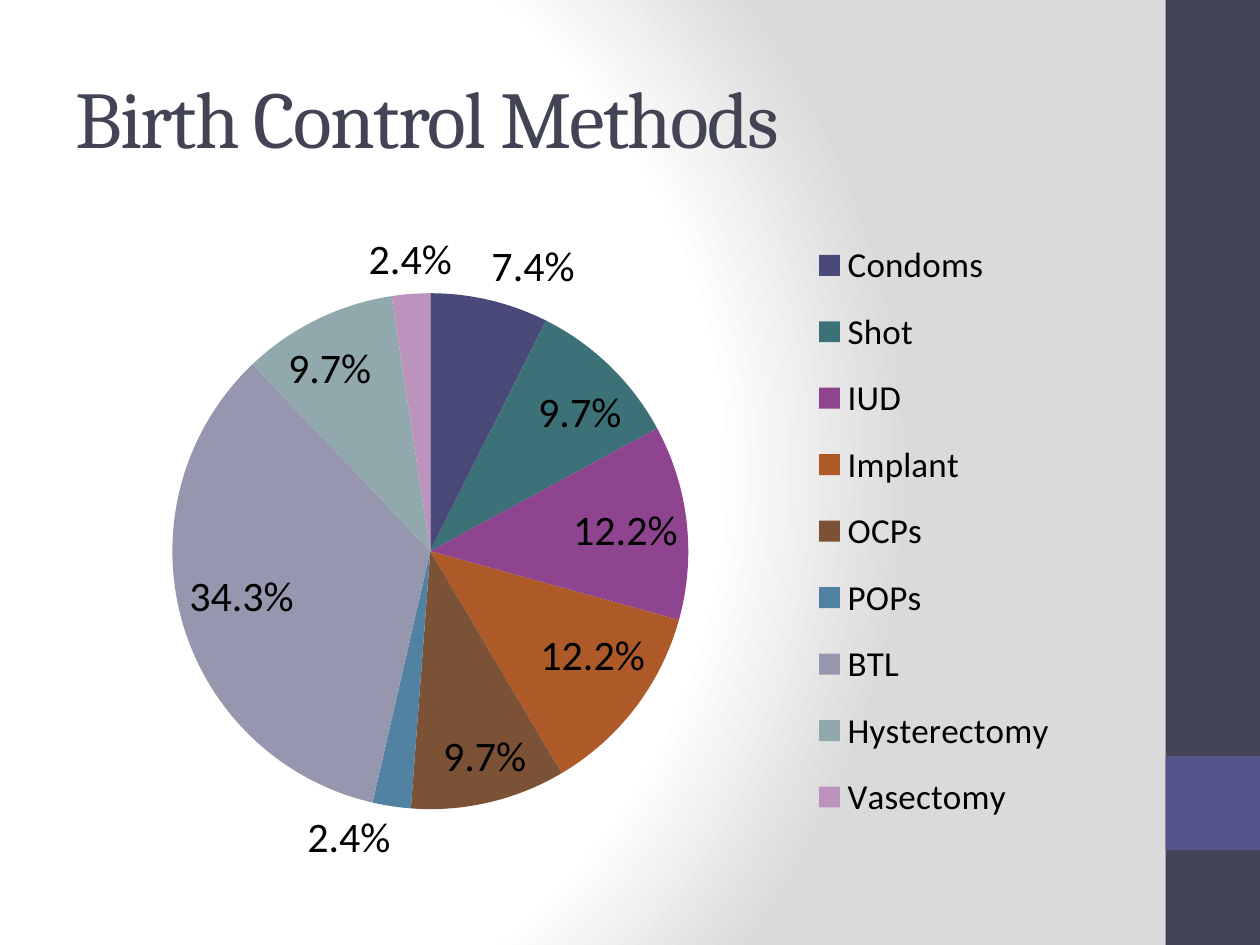
from dataclasses import dataclass

from lxml import etree
from pptx import Presentation
from pptx.chart.data import CategoryChartData
from pptx.dml.color import RGBColor
from pptx.enum.chart import XL_CHART_TYPE, XL_LABEL_POSITION, XL_LEGEND_POSITION
from pptx.enum.shapes import MSO_SHAPE
from pptx.enum.text import MSO_ANCHOR
from pptx.oxml import parse_xml
from pptx.oxml.ns import nsdecls, qn
from pptx.util import Inches, Pt

PIE = XL_CHART_TYPE.PIE
BEST_FIT = XL_LABEL_POSITION.BEST_FIT
LEGEND_RIGHT = XL_LEGEND_POSITION.RIGHT
RECTANGLE = MSO_SHAPE.RECTANGLE
MIDDLE = MSO_ANCHOR.MIDDLE


@dataclass(frozen=True)
class Theme:
    heading_font: str = "Cambria"
    body_font: str = "Calibri"
    title_size: int = 46
    label_size: int = 24
    legend_size: int = 20
    dark: str = "424456"
    accent: str = "53548A"
    text: str = "000000"
    background_stops: tuple = ((0, "FFFFFF"), (75, "FFFFFF"), (100, "DADADA"))


THEME = Theme()
WIDTH, HEIGHT = 10, 7.5
BAND_WIDTH = 0.75
CONTENT_LEFT, CONTENT_WIDTH = 0.5, 8.33

# Method, share in percent, slice colour
METHODS = (
    ("Condoms", 7.4, "4A4A7A"),
    ("Shot", 9.7, "3C7277"),
    ("IUD", 12.2, "8F4490"),
    ("Implant", 12.2, "AE5A28"),
    ("OCPs", 9.7, "7B5236"),
    ("POPs", 2.4, "5182A1"),
    ("BTL", 34.3, "9796AF"),
    ("Hysterectomy", 9.7, "91A9AC"),
    ("Vasectomy", 2.4, "BB93BC"),
)


def set_font(font, name, size, color):
    font.name = name
    font.size = Pt(size)
    font.color.rgb = RGBColor.from_string(color)


def paint_background(slide):
    """Fill the slide with a circular gradient centred left of the middle."""
    fill = slide.background.fill
    fill.solid()
    solid = slide.element.cSld.find(".//" + qn("a:solidFill"))
    stops = "".join(
        f'<a:gs pos="{position * 1000}"><a:srgbClr val="{color}"/></a:gs>'
        for position, color in THEME.background_stops
    )
    gradient = parse_xml(
        f'<a:gradFill {nsdecls("a")} rotWithShape="1"><a:gsLst>{stops}</a:gsLst>'
        '<a:path path="circle">'
        '<a:fillToRect l="20000" t="50000" r="100000" b="50000"/>'
        "</a:path></a:gradFill>"
    )
    solid.getparent().replace(solid, gradient)


def add_block(slide, box, color):
    shape = slide.shapes.add_shape(RECTANGLE, *map(Inches, box))
    shape.shadow.inherit = False
    shape.fill.solid()
    shape.fill.fore_color.rgb = RGBColor.from_string(color)
    shape.line.fill.background()


def add_side_band(slide, box):
    """Draw the dark band with a square accent one square above its foot."""
    left, top, width, height = box
    add_block(slide, box, THEME.dark)
    add_block(slide, (left, top + height - 2 * width, width, width), THEME.accent)


def add_title(slide, box, text):
    frame = slide.shapes.add_textbox(*map(Inches, box)).text_frame
    frame.word_wrap = True
    frame.vertical_anchor = MIDDLE
    run = frame.paragraphs[0].add_run()
    run.text = text
    set_font(run.font, THEME.heading_font, THEME.title_size, THEME.dark)
    run.font._element.set("spc", "-100")


def manual_layout(shares, inner=False):
    """Return a chart layout for x, y, w and h given as shares of the chart."""
    layout = parse_xml(f'<c:layout {nsdecls("c")}><c:manualLayout/></c:layout>')
    settings = [("layoutTarget", "inner")] if inner else []
    settings += [("xMode", "edge"), ("yMode", "edge"), *zip("xywh", shares)]
    for tag, value in settings:
        etree.SubElement(layout[0], qn(f"c:{tag}")).set("val", str(value))
    return layout


def place_plot(chart, shares):
    plot_area = chart._chartSpace.chart.plotArea
    for layout in plot_area.findall(qn("c:layout")):
        plot_area.remove(layout)
    plot_area.insert(0, manual_layout(shares, inner=True))


def place_legend(chart, shares):
    element = chart.legend._element
    for layout in element.findall(qn("c:layout")):
        element.remove(layout)
    element.find(qn("c:legendPos")).addnext(manual_layout(shares))


def add_method_chart(slide, box):
    data = CategoryChartData(number_format='0.0"%"')
    data.categories = [name for name, _, _ in METHODS]
    data.add_series("Series 1", [share for _, share, _ in METHODS])
    chart = slide.shapes.add_chart(PIE, *map(Inches, box), data).chart
    chart.has_title = False
    set_font(chart.font, THEME.body_font, THEME.legend_size, THEME.text)

    chart.has_legend = True
    chart.legend.position = LEGEND_RIGHT
    chart.legend.include_in_layout = False
    set_font(chart.legend.font, THEME.body_font, THEME.legend_size, THEME.text)

    plot = chart.plots[0]
    plot.vary_by_categories = True
    series = plot.series[0]
    for index, (_, _, color) in enumerate(METHODS):
        point_format = series.points[index].format
        point_format.fill.solid()
        point_format.fill.fore_color.rgb = RGBColor.from_string(color)
        point_format.line.fill.background()

    labels = series.data_labels
    labels.show_value = True
    labels.number_format = '0.0"%"'
    labels.number_format_is_linked = False
    labels.position = BEST_FIT
    set_font(labels.font, THEME.body_font, THEME.label_size, THEME.text)

    place_plot(chart, (0.1, 0.11, 0.5, 0.78))
    place_legend(chart, (0.7, 0, 0.26, 0.94))


def main():
    presentation = Presentation()
    presentation.slide_width = Inches(WIDTH)
    presentation.slide_height = Inches(HEIGHT)
    slide = presentation.slides.add_slide(presentation.slide_layouts[6])
    paint_background(slide)
    add_side_band(slide, (WIDTH - BAND_WIDTH, 0, BAND_WIDTH, HEIGHT))
    add_title(slide, (CONTENT_LEFT, 0.3, CONTENT_WIDTH, 1.25), "Birth Control Methods")
    add_method_chart(slide, (CONTENT_LEFT, 1.75, CONTENT_WIDTH, 5.25))
    presentation.save("out.pptx")


if __name__ == "__main__":
    main()
